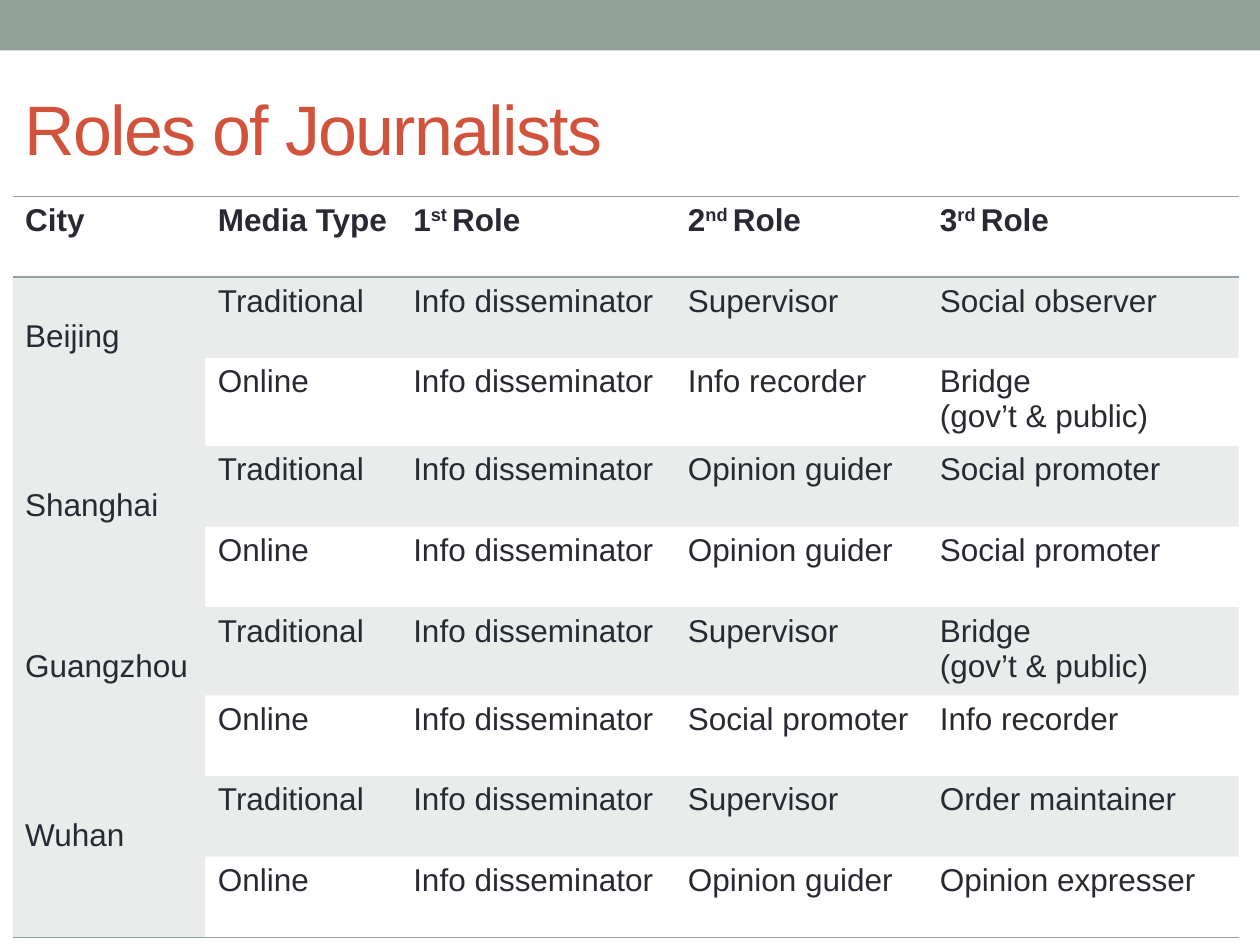
from typing import NamedTuple

from lxml.etree import SubElement as Sub
from pptx import Presentation as Deck
from pptx.dml.color import RGBColor
from pptx.enum.shapes import MSO_SHAPE as Form
from pptx.enum.text import MSO_ANCHOR as Anchor
from pptx.oxml import parse_xml
from pptx.oxml.ns import nsdecls, qn
from pptx.util import Inches, Pt

SAGE = RGBColor(0x93, 0xA2, 0x99)
RUST = RGBColor(0xD2, 0x53, 0x3C)
INK = RGBColor(0x29, 0x29, 0x34)

WIDE, HIGH = Inches(10), Inches(7.5)
COLS = (0.153, 0.155, 0.218, 0.2, 0.247)
ROW = 0.64 / 7.5
PLAIN = "{2D5ABB26-0587-4C30-8999-92F81FD0307C}"

BODY = {"name": "Arial", "size": Pt(18), "bold": False}
HEAD = BODY | {"bold": True}
TITLE = BODY | {"size": Pt(40)}
DROP = {"margin_top": Inches(0.33), "margin_bottom": 0}


class Box(NamedTuple):
    left: float
    top: float
    width: float
    height: float

    def place(self) -> tuple[int, ...]:
        return tuple(round(part * side) for part, side in zip(self, (WIDE, HIGH) * 2))


class Role(NamedTuple):
    media: str
    first: str
    second: str
    third: str


class City(NamedTuple):
    name: str
    press: Role
    web: Role


INFO = "Info disseminator"
BRIDGE = "Bridge\n(gov’t & public)"
LABELS = ("City", "Media Type", ("1", "st ", "Role"),
          ("2", "nd ", "Role"), ("3", "rd ", "Role"))
CITIES = (
    City("Beijing",
         Role("Traditional", INFO, "Supervisor", "Social observer"),
         Role("Online", INFO, "Info recorder", BRIDGE)),
    City("Shanghai",
         Role("Traditional", INFO, "Opinion guider", "Social promoter"),
         Role("Online", INFO, "Opinion guider", "Social promoter")),
    City("Guangzhou",
         Role("Traditional", INFO, "Supervisor", BRIDGE),
         Role("Online", INFO, "Social promoter", "Info recorder")),
    City("Wuhan",
         Role("Traditional", INFO, "Supervisor", "Order maintainer"),
         Role("Online", INFO, "Opinion guider", "Opinion expresser")),
)


def apply(item, look: dict) -> None:
    for key, value in look.items():
        setattr(item, key, value)


def add_run(para, text: str, look: dict, color: RGBColor = INK):
    run = para.add_run()
    run.text = text
    apply(run.font, look)
    run.font.color.rgb = color
    return run.font._element


def write(cell, text: str | tuple, look: dict = BODY) -> None:
    frame = cell.text_frame
    if isinstance(text, tuple):
        for index, part in enumerate(text):
            props = add_run(frame.paragraphs[0], part, look)
            if index == 1:
                props.set("baseline", "30000")
        return
    for index, line in enumerate(text.split("\n")):
        para = frame.add_paragraph() if index else frame.paragraphs[0]
        add_run(para, line, look)


def tint(cell) -> None:
    cell.fill.solid()
    cell.fill.fore_color.rgb = SAGE
    for color in cell._tc.iter(qn("a:srgbClr")):
        if color.get("val") == str(SAGE):
            Sub(color, qn("a:alpha"), val="20000")


def rule(cell, *sides: str) -> None:
    props = cell._tc.get_or_add_tcPr()
    for side in reversed(sides):
        props.insert(0, parse_xml(
            f'<a:ln{side} {nsdecls("a")} w="12700"><a:solidFill>'
            f'<a:srgbClr val="{SAGE}"/></a:solidFill></a:ln{side}>'))


def add_band(slide, box: Box) -> None:
    band = slide.shapes.add_shape(Form.RECTANGLE, *box.place())
    band.shadow.inherit = False
    band.fill.solid()
    band.fill.fore_color.rgb = SAGE
    band.line.fill.background()


def add_title(slide, text: str, box: Box) -> None:
    frame = slide.shapes.add_textbox(*box.place()).text_frame
    apply(frame, {"word_wrap": True, "vertical_anchor": Anchor.MIDDLE})
    add_run(frame.paragraphs[0], text, TITLE, RUST).set("spc", "-100")


def add_grid(slide, left: float, top: float) -> None:
    count = 1 + 2 * len(CITIES)
    box = Box(left, top, sum(COLS), count * ROW)
    frame = slide.shapes.add_table(count, len(COLS), *box.place())
    grid = frame.table
    apply(grid, {"first_row": False, "horz_banding": False})
    for style in frame._element.iter(qn("a:tableStyleId")):
        style.text = PLAIN
    for col, share in zip(grid.columns, COLS):
        col.width = round(share * WIDE)
    for row in grid.rows:
        row.height = round(ROW * HIGH)
    for col, text in enumerate(LABELS):
        write(grid.cell(0, col), text, HEAD)
    for index, city in enumerate(CITIES):
        row = 1 + 2 * index
        name = grid.cell(row, 0)
        name.merge(grid.cell(row + 1, 0))
        write(name, city.name)
        apply(name, DROP)
        tint(name)
        for step, role in enumerate((city.press, city.web)):
            for col, text in enumerate(role, 1):
                cell = grid.cell(row + step, col)
                write(cell, text)
                if step == 0:
                    tint(cell)
    for col in range(len(COLS)):
        rule(grid.cell(0, col), "T", "B")
        rule(grid.cell(count - 1, col), "B")
    rule(grid.cell(count - 2, 0), "B")


def main() -> None:
    deck = Deck()
    apply(deck, {"slide_width": WIDE, "slide_height": HIGH})
    slide = deck.slides.add_slide(deck.slide_layouts[6])
    add_band(slide, Box(0, 0, 1, 0.4 / 7.5))
    add_title(slide, "Roles of Journalists", Box(0.01, 0.47 / 7.5, 0.9, 1.08 / 7.5))
    add_grid(slide, 0.01, 1.56 / 7.5)
    deck.save("out.pptx")


if __name__ == "__main__":
    main()
